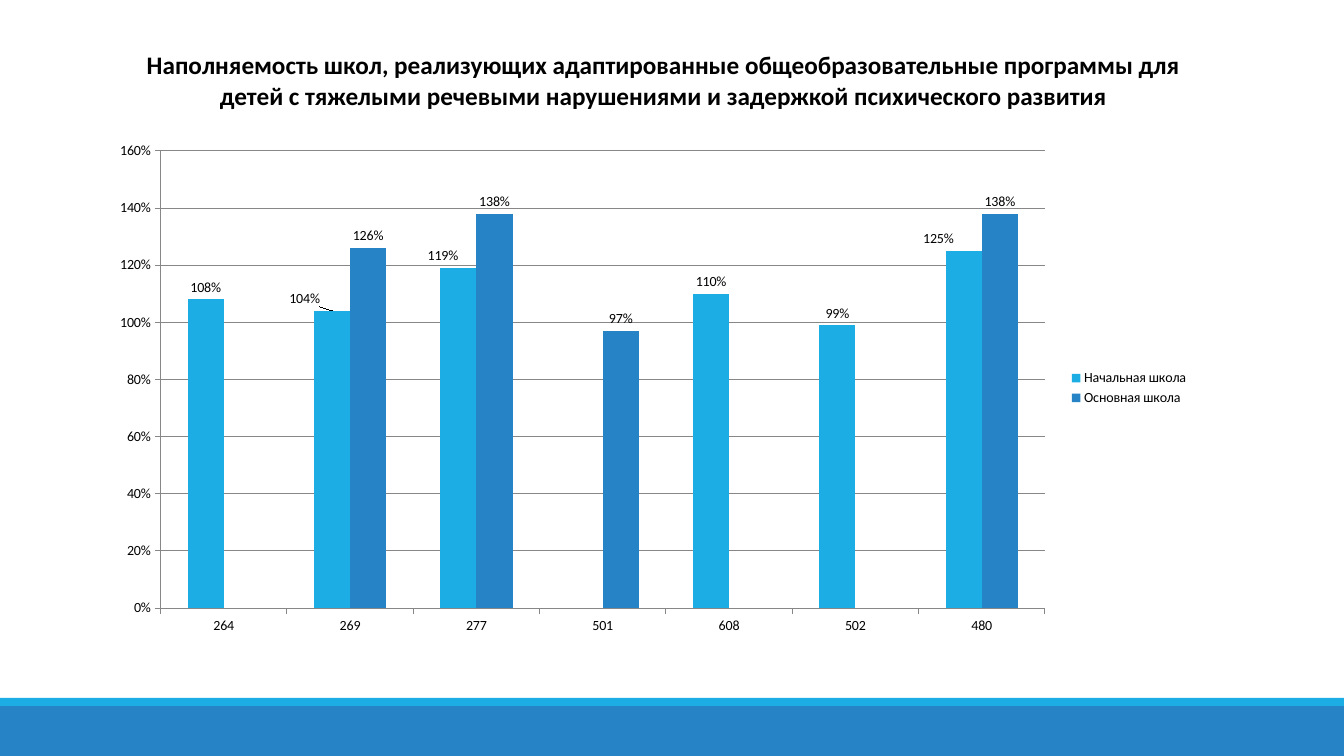
from lxml.etree import SubElement
from pptx import Presentation
from pptx.chart.data import CategoryChartData
from pptx.dml.color import RGBColor
from pptx.enum.chart import XL_CHART_TYPE, XL_LABEL_POSITION, XL_LEGEND_POSITION, XL_TICK_MARK
from pptx.enum.shapes import MSO_SHAPE
from pptx.enum.text import MSO_ANCHOR, MSO_AUTO_SIZE, PP_ALIGN
from pptx.oxml.ns import qn
from pptx.util import Emu, Pt

BLACK = RGBColor(0x00, 0x00, 0x00)
GRAY = RGBColor(0x87, 0x87, 0x87)
LIGHT_BLUE = RGBColor(0x1C, 0xAD, 0xE4)
DARK_BLUE = RGBColor(0x26, 0x83, 0xC6)
FONT = "Calibri"


def px(length):
    return Emu(round(length * 914400 / 100.8))


def set_layout(parent, index, **settings):
    """Place a chart part by fractions of the chart size."""
    for previous in parent.findall(qn("c:layout")):
        parent.remove(previous)
    layout = SubElement(parent, qn("c:layout"))
    manual = SubElement(layout, qn("c:manualLayout"))
    for name, value in settings.items():
        SubElement(manual, qn(f"c:{name}")).set("val", str(value))
    parent.insert(index, layout)


presentation = Presentation()
presentation.slide_width, presentation.slide_height = px(1344), px(756)
slide = presentation.slides.add_slide(presentation.slide_layouts[5])

# Bottom bands
for top, height, color in ((706, 50, DARK_BLUE), (698, 8, LIGHT_BLUE)):
    band = slide.shapes.add_shape(MSO_SHAPE.RECTANGLE, 0, px(top), px(1344), px(height))
    band.shadow.inherit = False
    band.fill.solid()
    band.fill.fore_color.rgb = color
    band.line.fill.background()

# Title
title = slide.shapes.title
title.left, title.top, title.width, title.height = px(115), px(44), px(1097), px(72)
title.text_frame.text = (
    "Наполняемость школ, реализующих адаптированные общеобразовательные программы "
    "для детей с тяжелыми речевыми нарушениями и задержкой психического развития"
)
title.text_frame.word_wrap = True
title.text_frame.auto_size = MSO_AUTO_SIZE.SHAPE_TO_FIT_TEXT
title.text_frame.vertical_anchor = MSO_ANCHOR.MIDDLE
paragraph = title.text_frame.paragraphs[0]
paragraph.alignment = PP_ALIGN.CENTER
paragraph.font.name = FONT
paragraph.font.size = Pt(18)
paragraph.font.bold = True
paragraph.font.color.rgb = BLACK

# Chart
chart_data = CategoryChartData(number_format="0%")
chart_data.categories = ["264", "269", "277", "501", "608", "502", "480"]
chart_data.add_series("Начальная школа", [1.08, 1.04, 1.19, None, 1.1, 0.99, 1.25])
chart_data.add_series("Основная школа", [None, 1.26, 1.38, 0.97, None, None, 1.38])
chart = slide.shapes.add_chart(
    XL_CHART_TYPE.COLUMN_CLUSTERED, px(99), px(132), px(1100), px(512), chart_data
).chart
chart.has_title = False
chart.font.name = FONT
chart.font.size = Pt(10)
chart.font.color.rgb = BLACK
chart.has_legend = True
chart.legend.position = XL_LEGEND_POSITION.RIGHT
chart.legend.include_in_layout = False
set_layout(chart.element.find(".//" + qn("c:plotArea")), 0, layoutTarget="inner",
           xMode="edge", yMode="edge", x=0.056, y=0.037, w=0.804, h=0.893)

# Axes
for axis in (chart.category_axis, chart.value_axis):
    axis.major_tick_mark = XL_TICK_MARK.OUTSIDE
    axis.minor_tick_mark = XL_TICK_MARK.NONE
    axis.format.line.color.rgb = GRAY
value_axis = chart.value_axis
value_axis.minimum_scale, value_axis.maximum_scale, value_axis.major_unit = 0, 1.6, 0.2
value_axis.has_major_gridlines = True
value_axis.major_gridlines.format.line.color.rgb = GRAY
value_axis.tick_labels.number_format = "0%"
value_axis.tick_labels.number_format_is_linked = False

# Columns and their labels
plot = chart.plots[0]
plot.gap_width = 150
plot.overlap = 0
plot.vary_by_categories = False
for series, color in zip(plot.series, (LIGHT_BLUE, DARK_BLUE)):
    series.format.fill.solid()
    series.format.fill.fore_color.rgb = color
    series.data_labels.show_value = True
    series.data_labels.position = XL_LABEL_POSITION.OUTSIDE_END

# Labels moved left, clear of the neighbouring column
label_shifts = {1: -0.025, 2: -0.014, 6: -0.023}
for index in label_shifts:
    plot.series[0].points[index].data_label.position = XL_LABEL_POSITION.OUTSIDE_END
for label, shift in zip(chart.element.iter(qn("c:dLbl")), label_shifts.values()):
    set_layout(label, 1, x=shift, y=0)

presentation.save("out.pptx")
